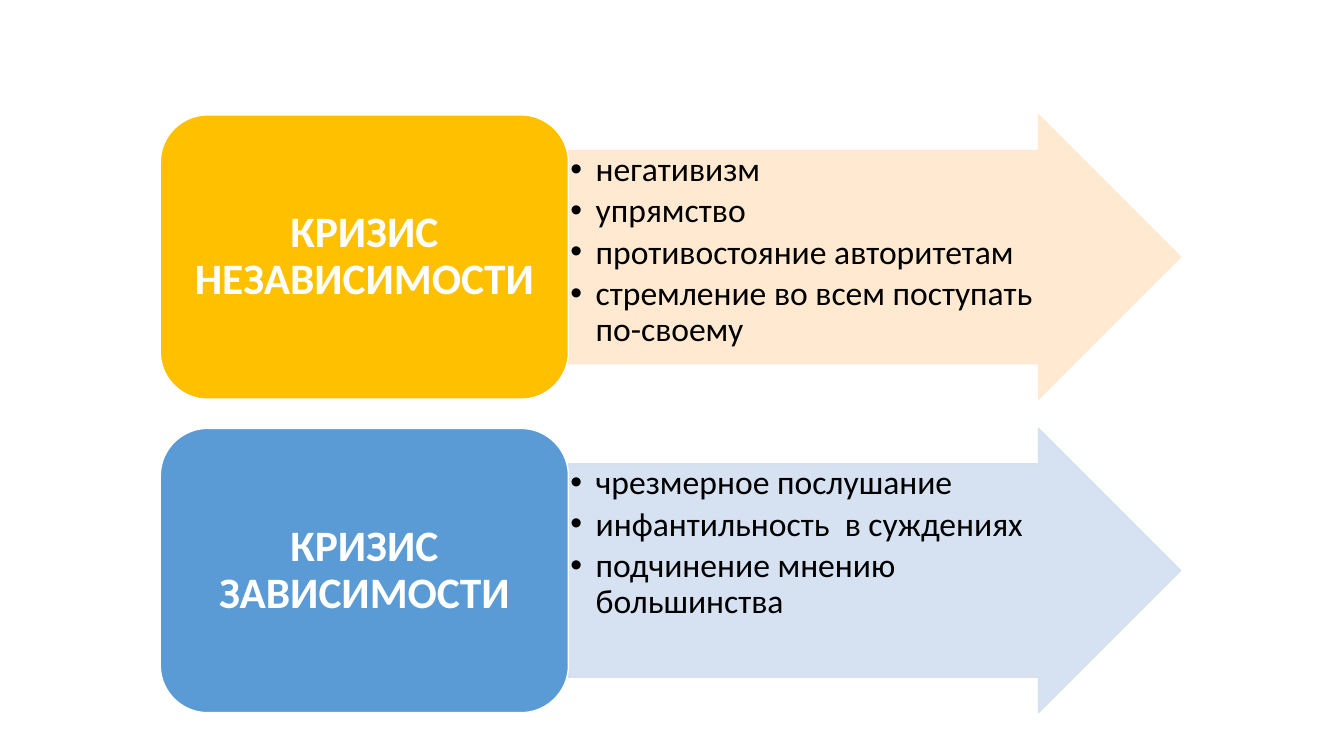
from lxml import etree
from pptx import Presentation
from pptx.dml.color import RGBColor
from pptx.enum.shapes import MSO_SHAPE
from pptx.enum.text import MSO_ANCHOR, PP_ALIGN
from pptx.oxml.ns import qn
from pptx.util import Inches, Pt

ARROW, ROUNDED = MSO_SHAPE.RIGHT_ARROW, MSO_SHAPE.ROUNDED_RECTANGLE
TOP, MIDDLE = MSO_ANCHOR.TOP, MSO_ANCHOR.MIDDLE
LEFT, CENTER = PP_ALIGN.LEFT, PP_ALIGN.CENTER

FONT = "Calibri"
COLORS = {
    "white": "FFFFFF", "black": "000000",
    "gold": "FFC000", "gold_tint": "FFE8CC",
    "blue": "5B9BD5", "blue_tint": "D2DFF0",
}

# Row grid, in inches
ROW_LEFT, ROW_TOP, ROW_WIDTH, ROW_HEIGHT, ROW_PITCH = 1.59, 1.14, 10.12, 2.82, 3.11
LABEL_SHARE = 0.4

CRISES = [
    ("КРИЗИС НЕЗАВИСИМОСТИ", "gold",
     ["негативизм", "упрямство", "противостояние авторитетам",
      "стремление во всем поступать по-своему"]),
    ("КРИЗИС ЗАВИСИМОСТИ", "blue",
     ["чрезмерное послушание", "инфантильность  в суждениях",
      "подчинение мнению большинства"]),
]


def rgb(name):
    return RGBColor.from_string(COLORS[name])


def set_alpha(fill_format, percent):
    """Make the solid colour of a fill partly transparent."""
    color = fill_format._xPr.find(qn("a:solidFill"))[0]
    etree.SubElement(color, qn("a:alpha"), val=str(percent * 1000))


def add_block(slide, preset, box, fill, line, alpha=None):
    block = slide.shapes.add_shape(preset, *(Inches(length) for length in box))
    block.shadow.inherit = False
    block.line.width = Pt(1)
    for paint, color in ((block.fill, fill), (block.line.fill, line)):
        paint.solid()
        paint.fore_color.rgb = rgb(color)
        if alpha:
            set_alpha(paint, alpha)
    return block


def write_text(shape, lines, size, color, insets, bold=False, align=LEFT,
               anchor=TOP, space_after=0, bullet=False):
    frame = shape.text_frame
    frame.word_wrap = True
    frame.vertical_anchor = anchor
    (frame.margin_left, frame.margin_top,
     frame.margin_right, frame.margin_bottom) = (Inches(i) for i in insets)
    for index, line in enumerate(lines):
        paragraph = frame.add_paragraph() if index else frame.paragraphs[0]
        paragraph.alignment = align
        paragraph.line_spacing = 0.9
        paragraph.space_after = Pt(space_after)
        if bullet:
            properties = paragraph._p.get_or_add_pPr()
            properties.set("marL", str(Inches(0.25)))
            properties.set("indent", str(-Inches(0.25)))
            etree.SubElement(properties, qn("a:buFont"), typeface="Arial")
            etree.SubElement(properties, qn("a:buChar"), char="•")
        run = paragraph.add_run()
        run.text = line
        run.font.name = FONT
        run.font.size = Pt(size)
        run.font.bold = bold
        run.font.color.rgb = rgb(color)


def add_crisis(slide, box, name, hue, signs):
    """Place a named label and the arrow that lists its signs."""
    left, top, width, height = box
    label_width = width * LABEL_SHARE

    # Arrow with the signs
    tint = hue + "_tint"
    arrow = add_block(
        slide, ARROW, (left + label_width, top, width - label_width, height),
        tint, tint, alpha=90)
    arrow.adjustments[0] = 0.75
    arrow.adjustments[1] = 0.5
    write_text(arrow, signs, 24, "black", (0.02, 0.02, 0.02, 0.02),
               space_after=3.6, bullet=True)

    # Label
    label = add_block(slide, ROUNDED, (left, top, label_width, height), hue, "white")
    write_text(label, [name], 31, "white", (0.13, 0.06, 0.13, 0.06),
               bold=True, align=CENTER, anchor=MIDDLE)


def main():
    deck = Presentation()
    deck.slide_width, deck.slide_height = Inches(13.33), Inches(7.5)
    slide = deck.slides.add_slide(deck.slide_layouts.get_by_name("Blank"))
    for row, (name, hue, signs) in enumerate(CRISES):
        box = (ROW_LEFT, ROW_TOP + row * ROW_PITCH, ROW_WIDTH, ROW_HEIGHT)
        add_crisis(slide, box, name, hue, signs)
    deck.save("out.pptx")


if __name__ == "__main__":
    main()
